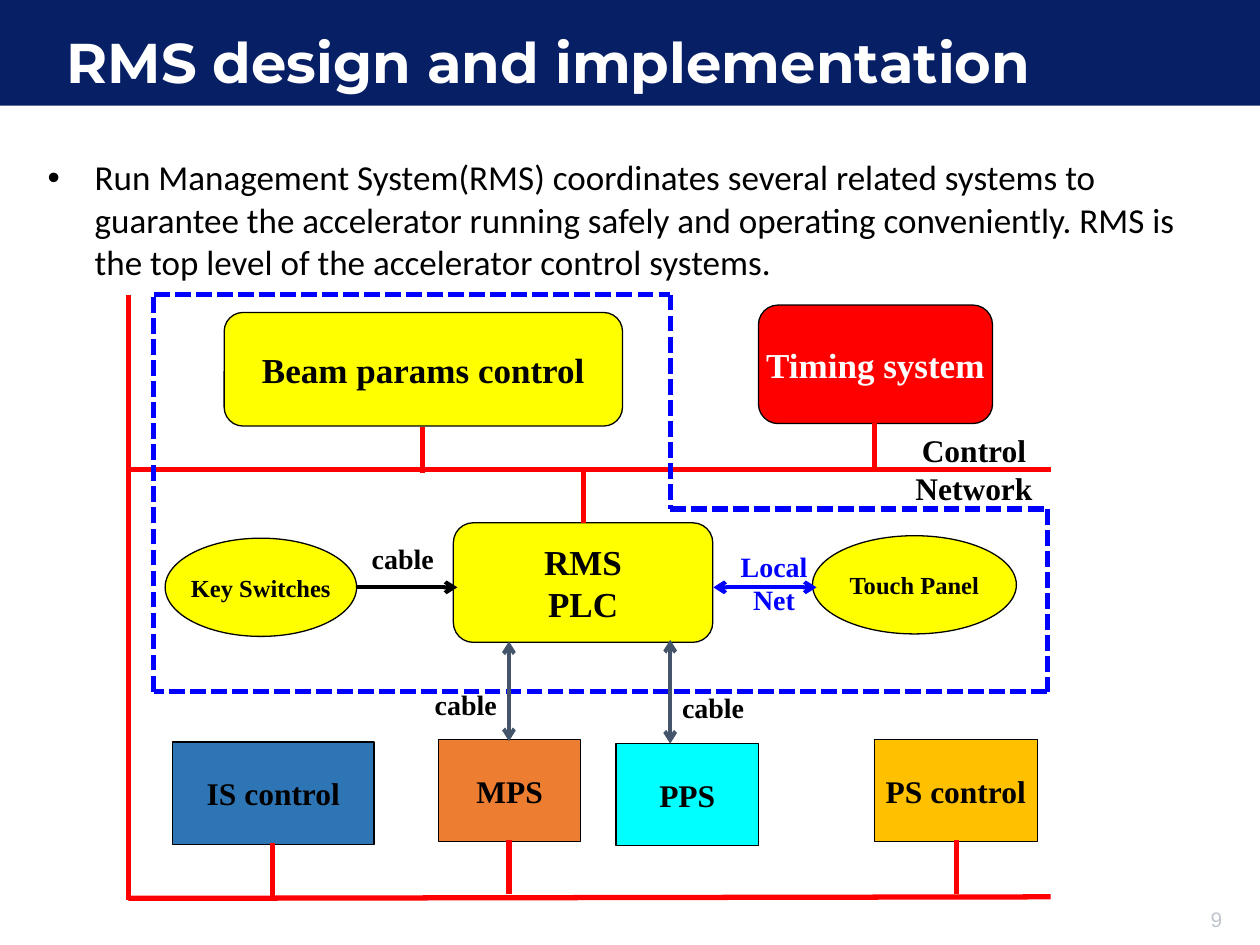
from lxml import etree
from pptx import Presentation
from pptx.dml.color import RGBColor
from pptx.enum.dml import MSO_LINE
from pptx.enum.shapes import MSO_CONNECTOR, MSO_SHAPE
from pptx.enum.text import MSO_ANCHOR as ANCHOR, PP_ALIGN as ALIGN
from pptx.oxml.ns import qn
from pptx.util import Cm, Pt

BLACK = RGBColor(0x00, 0x00, 0x00)
WHITE = RGBColor(0xFF, 0xFF, 0xFF)
NAVY = RGBColor(0x07, 0x1F, 0x65)
GRAY = RGBColor(0xC0, 0xC5, 0xCE)
YELLOW = RGBColor(0xFF, 0xFF, 0x00)
RED = RGBColor(0xFF, 0x00, 0x00)
BLUE = RGBColor(0x00, 0x00, 0xFF)
SLATE = RGBColor(0x44, 0x54, 0x6A)
ORANGE = RGBColor(0xED, 0x7D, 0x31)
GOLD = RGBColor(0xFF, 0xC0, 0x00)
STEEL = RGBColor(0x2E, 0x75, 0xB6)
CYAN = RGBColor(0x00, 0xFF, 0xFF)

presentation = Presentation()
presentation.slide_width, presentation.slide_height = Cm(25.4), Cm(19.05)
slide = presentation.slides.add_slide(presentation.slide_layouts[6])
shapes = slide.shapes


def write(shape, text, size, color, font="Times New Roman", bold=True, align=ALIGN.CENTER):
    text_frame = shape.text_frame
    text_frame.text = text
    for paragraph in text_frame.paragraphs:
        paragraph.alignment = align
        for run in paragraph.runs:
            run.font.name, run.font.size, run.font.bold = font, Pt(size), bold
            run.font.color.rgb = color


def connect(start, end, color, width=3, arrows=(), dash=None):
    points = [Cm(value) for value in (*start, *end)]
    connector = shapes.add_connector(MSO_CONNECTOR.STRAIGHT, *points)
    connector.line.color.rgb = color
    connector.line.width = Pt(width)
    if dash:
        connector.line.dash_style = dash
    line = connector.line._get_or_add_ln()
    for arrow in arrows:
        etree.SubElement(line, qn(f"a:{arrow}"), type="arrow")
    etree.SubElement(connector._element.spPr, qn("a:effectLst"))


# Title banner
banner = shapes.add_shape(MSO_SHAPE.RECTANGLE, 0, 0, Cm(25.4), Cm(2.13))
banner.shadow.inherit = False
banner.fill.solid()
banner.fill.fore_color.rgb = NAVY
banner.line.fill.background()

title = shapes.add_textbox(Cm(1.09), Cm(0.51), Cm(21.84), Cm(1.63))
title.text_frame.word_wrap = True
title.text_frame.vertical_anchor = ANCHOR.MIDDLE
write(title, "RMS design and implementation", 32, WHITE, "Montserrat", align=ALIGN.LEFT)
title.text_frame.paragraphs[0].line_spacing = 0.9

# Page number
number = shapes.add_textbox(Cm(23.85), Cm(18.16), Cm(1.04), Cm(0.76))
number.text_frame.word_wrap = True
write(number, "9", 12, GRAY, "Arial", False, ALIGN.RIGHT)

# Bulleted introduction
intro = shapes.add_textbox(Cm(0.71), Cm(3.02), Cm(23.39), Cm(2.82))
intro.text_frame.word_wrap = True
write(intro, "Run Management System(RMS) coordinates several related systems to guarantee "
      "the accelerator running safely and operating conveniently. RMS is the top level "
      "of the accelerator control systems.", 20, BLACK, "Calibri", False, ALIGN.LEFT)
properties = intro.text_frame.paragraphs[0]._p.get_or_add_pPr()
properties.set("marL", str(Cm(0.95)))
properties.set("indent", str(-Cm(0.95)))
etree.SubElement(properties, qn("a:buFont"), typeface="Arial")
etree.SubElement(properties, qn("a:buChar"), char="•")

# Systems: text, preset, left, top, width, height, fill, text size, text colour
RECT, ROUND, OVAL = MSO_SHAPE.RECTANGLE, MSO_SHAPE.ROUNDED_RECTANGLE, MSO_SHAPE.OVAL
systems = [
    ("Beam params control", ROUND, 4.52, 6.3, 8.03, 2.29, YELLOW, 20, BLACK),
    ("Timing system", ROUND, 15.29, 6.15, 4.72, 2.39, RED, 20, WHITE),
    ("Key Switches", OVAL, 3.33, 10.85, 3.86, 1.98, YELLOW, 14, BLACK),
    ("RMS\nPLC", ROUND, 9.14, 10.54, 5.23, 2.41, YELLOW, 20, BLACK),
    ("Touch Panel", OVAL, 16.38, 10.8, 4.11, 1.98, YELLOW, 14, BLACK),
    ("IS control", RECT, 3.48, 14.96, 4.06, 2.06, STEEL, 18, BLACK),
    ("MPS", RECT, 8.84, 14.91, 2.87, 2.06, ORANGE, 18, BLACK),
    ("PPS", RECT, 12.42, 14.99, 2.87, 2.06, CYAN, 18, BLACK),
    ("PS control", RECT, 17.63, 14.91, 3.28, 2.06, GOLD, 18, BLACK),
]
for text, preset, left, top, width, height, fill, size, color in systems:
    system = shapes.add_shape(preset, Cm(left), Cm(top), Cm(width), Cm(height))
    system.shadow.inherit = False
    system.fill.solid()
    system.fill.fore_color.rgb = fill
    system.line.color.rgb = BLACK
    system.line.width = Pt(0.75)
    system.text_frame.word_wrap = False
    system.text_frame.vertical_anchor = ANCHOR.MIDDLE
    write(system, text, size, color)

# Red control network: trunk, two buses and vertical stubs
connect((2.59, 5.94), (2.59, 18.14), RED)
connect((2.59, 9.47), (21.18, 9.47), RED)
connect((2.59, 18.11), (21.18, 18.08), RED)
stubs = [(17.63, 8.53, 9.47), (8.51, 8.61, 9.53), (11.76, 9.47, 10.54),
         (5.49, 16.99, 18.08), (10.26, 16.94, 18.03), (19.28, 16.94, 18.03)]
for x, top, bottom in stubs:
    connect((x, top), (x, bottom), RED)

# Dashed boundary of the RMS
corners = [(3.1, 5.94), (13.51, 5.94), (13.51, 10.26), (21.11, 10.26), (21.11, 13.94), (3.1, 13.94)]
for start, end in zip(corners, corners[1:] + corners[:1]):
    connect(start, end, BLUE, dash=MSO_LINE.SQUARE_DOT)

# Arrows to and from the PLC
BOTH = ("headEnd", "tailEnd")
connect((7.19, 11.84), (9.22, 11.84), BLACK, 2.25, ("tailEnd",))
connect((14.38, 11.84), (16.46, 11.84), BLUE, 2.25, BOTH)
connect((10.26, 12.93), (10.26, 14.94), SLATE, 2.25, BOTH)
connect((13.51, 12.9), (13.51, 14.99), SLATE, 2.25, BOTH)

# Labels: text, left, top, width, height, size, colour
labels = [
    ("Control Network", 18.06, 8.56, 3.15, 1.8, 18, BLACK),
    ("cable", 7.09, 10.8, 2.06, 0.94, 16, BLACK),
    ("Local\nNet", 13.84, 10.95, 3.53, 1.63, 16, BLUE),
    ("cable", 8.31, 13.74, 2.16, 0.94, 16, BLACK),
    ("cable", 13.36, 13.79, 2.03, 0.94, 16, BLACK),
]
for text, left, top, width, height, size, color in labels:
    label = shapes.add_textbox(Cm(left), Cm(top), Cm(width), Cm(height))
    label.text_frame.word_wrap = True
    write(label, text, size, color)

presentation.save("out.pptx")
